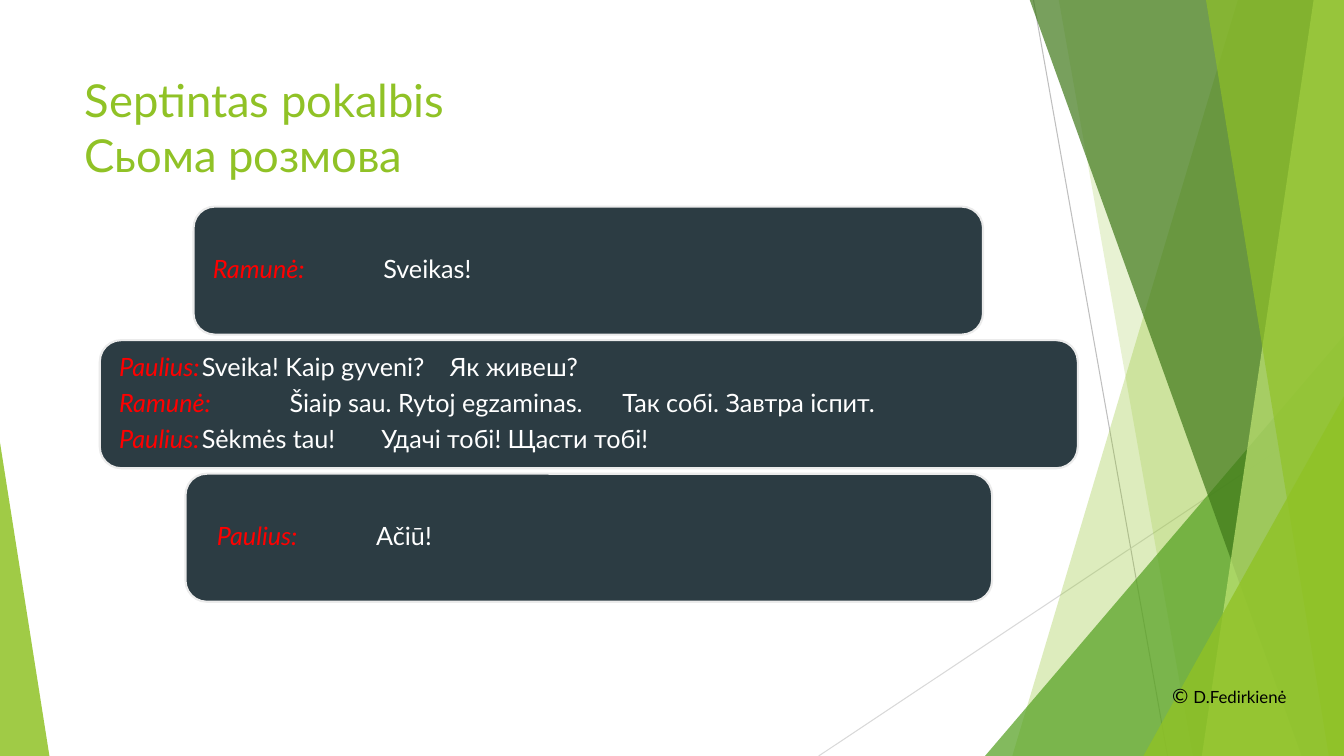
from dataclasses import dataclass

from lxml.etree import SubElement
from pptx import Presentation
from pptx.dml.color import RGBColor
from pptx.enum.shapes import MSO_CONNECTOR, MSO_SHAPE
from pptx.enum.text import MSO_ANCHOR, MSO_AUTO_SIZE, PP_ALIGN
from pptx.oxml.ns import qn
from pptx.util import Inches, Pt


@dataclass(frozen=True)
class Theme:
    font: str = "Lato"
    green: str = "90C226"
    mid_green: str = "54A021"
    dark_green: str = "3F7819"
    pale_green: str = "C0E474"
    slate: str = "2C3C43"
    card_border: str = "EBEBEB"
    speaker: str = "FF0000"
    white: str = "FFFFFF"
    black: str = "000000"
    title_size: float = 32.4
    dialogue_size: float = 18
    symbol_size: float = 14
    credit_size: float = 12


theme = Theme()
WIDTH, HEIGHT = 13.33, 7.5


def add_run(paragraph, text, size, color, italic=False):
    run = paragraph.add_run()
    run.text = text
    run.font.name = theme.font
    run.font.size = Pt(size)
    run.font.italic = italic
    run.font.color.rgb = RGBColor.from_string(color)


def style_facet(shape, color, opacity):
    shape.shadow.inherit = False
    shape.line.fill.background()
    shape.fill.solid()
    shape.fill.fore_color.rgb = RGBColor.from_string(color)
    color_element = shape.fill._xPr.find(qn("a:solidFill"))[0]
    SubElement(color_element, qn("a:alpha")).set("val", str(opacity * 1000))


presentation = Presentation()
presentation.slide_width = Inches(WIDTH)
presentation.slide_height = Inches(HEIGHT)
slide = presentation.slides.add_slide(presentation.slide_layouts[5])
shapes = slide.shapes

# Thin background lines
for start_x, start_y, end_x, color in [
    (10.25, 0, 11.58, "BFBFBF"),
    (WIDTH, 4.03, 8.12, "D9D9D9"),
]:
    line = shapes.add_connector(
        MSO_CONNECTOR.STRAIGHT,
        Inches(start_x), Inches(start_y), Inches(end_x), Inches(HEIGHT),
    )
    line.line.color.rgb = RGBColor.from_string(color)
    line.line.width = Pt(0.75)
    SubElement(line._element.spPr, qn("a:effectLst"))

# Green facets: bands give top and bottom left corners and run to the right edge,
# triangles give left, top, width and the side of the peak
facets = [
    ("band", (12.28, 10.04), theme.green, 30),
    ("band", (10.5, 11.83), theme.green, 20),
    ("triangle", (9.77, 3.33, 3.56, 1), theme.mid_green, 72),
    ("band", (10.21, 12.91), theme.dark_green, 70),
    ("band", (13.03, 11.92), theme.pale_green, 70),
    ("band", (11.96, 13.18), theme.green, 65),
    ("triangle", (11.34, 3.93, 1.99, 1), theme.green, 80),
    ("triangle", (0, 4.39, 0.49, 0), theme.green, 85),
]
for kind, geometry, color, opacity in facets:
    if kind == "band":
        top_x, bottom_x = geometry
        builder = shapes.build_freeform(Inches(top_x), Inches(-0.01))
        corners = [(WIDTH, -0.01), (WIDTH, HEIGHT), (bottom_x, HEIGHT)]
        builder.add_line_segments([(Inches(x), Inches(y)) for x, y in corners])
        facet = builder.convert_to_shape()
    else:
        left, top, width, peak = geometry
        facet = shapes.add_shape(
            MSO_SHAPE.ISOSCELES_TRIANGLE,
            Inches(left), Inches(top), Inches(width), Inches(HEIGHT - top),
        )
        facet.adjustments[0] = peak
    style_facet(facet, color, opacity)

# Title
title = shapes.title
title.left, title.top = Inches(0.74), Inches(0.67)
title.width, title.height = Inches(9.4), Inches(1.17)
title.text_frame.auto_size = MSO_AUTO_SIZE.NONE
title.text_frame.vertical_anchor = MSO_ANCHOR.TOP
paragraph = title.text_frame.paragraphs[0]
paragraph.alignment = PP_ALIGN.LEFT
add_run(paragraph, "Septintas pokalbis", theme.title_size, theme.green)
paragraph.add_line_break()
add_run(paragraph, "Сьома розмова", theme.title_size, theme.green)

# Dialogue cards: left, width, text inset and lines of speaker, words, tab stops
cards = [
    (1.92, 7.83, 0.13, [("Ramunė:", "Sveikas!", [1.69])]),
    (0.99, 9.7, 0.13, [
        ("Paulius:", "Sveika! Kaip gyveni?\tЯк живеш?", [0.82, 3.28]),
        ("Ramunė:", "Šiaip sau. Rytoj egzaminas.\tТак собі. Завтра іспит.", [1.69, 4.99]),
        ("Paulius:", "Sėkmės tau!\tУдачі тобі! Щасти тобі!", [0.82, 2.6]),
    ]),
    (1.84, 8, 0.25, [("Paulius:", "Ačiū!", [1.58])]),
]
for index, (left, width, inset, dialogue) in enumerate(cards):
    card = shapes.add_shape(
        MSO_SHAPE.ROUNDED_RECTANGLE,
        Inches(left), Inches(2.05 + index * 1.325), Inches(width), Inches(1.27),
    )
    card.shadow.inherit = False
    card.fill.solid()
    card.fill.fore_color.rgb = RGBColor.from_string(theme.slate)
    card.line.color.rgb = RGBColor.from_string(theme.card_border)
    card.line.width = Pt(1.5)
    frame = card.text_frame
    frame.word_wrap = True
    frame.vertical_anchor = MSO_ANCHOR.MIDDLE
    frame.margin_left = Inches(inset)
    frame.margin_right = frame.margin_top = frame.margin_bottom = Inches(0.07)
    for row, (speaker, words, stops) in enumerate(dialogue):
        paragraph = frame.add_paragraph() if row else frame.paragraphs[0]
        paragraph.alignment = PP_ALIGN.LEFT
        paragraph.line_spacing = 0.9
        paragraph.space_after = Pt(6.3)
        tab_list = SubElement(paragraph._p.get_or_add_pPr(), qn("a:tabLst"))
        for stop in stops:
            tab = SubElement(tab_list, qn("a:tab"))
            tab.set("pos", str(Inches(stop)))
            tab.set("algn", "l")
        add_run(paragraph, speaker + "\t", theme.dialogue_size, theme.speaker, italic=True)
        add_run(paragraph, words, theme.dialogue_size, theme.white)

# Credit
credit = shapes.add_textbox(Inches(10.78), Inches(6.61), Inches(2.08), Inches(0.59))
credit.text_frame.word_wrap = True
credit.text_frame.vertical_anchor = MSO_ANCHOR.MIDDLE
paragraph = credit.text_frame.paragraphs[0]
paragraph.alignment = PP_ALIGN.RIGHT
add_run(paragraph, "© ", theme.symbol_size, theme.black)
add_run(paragraph, "D.Fedirkienė", theme.credit_size, theme.black)

presentation.save("out.pptx")
